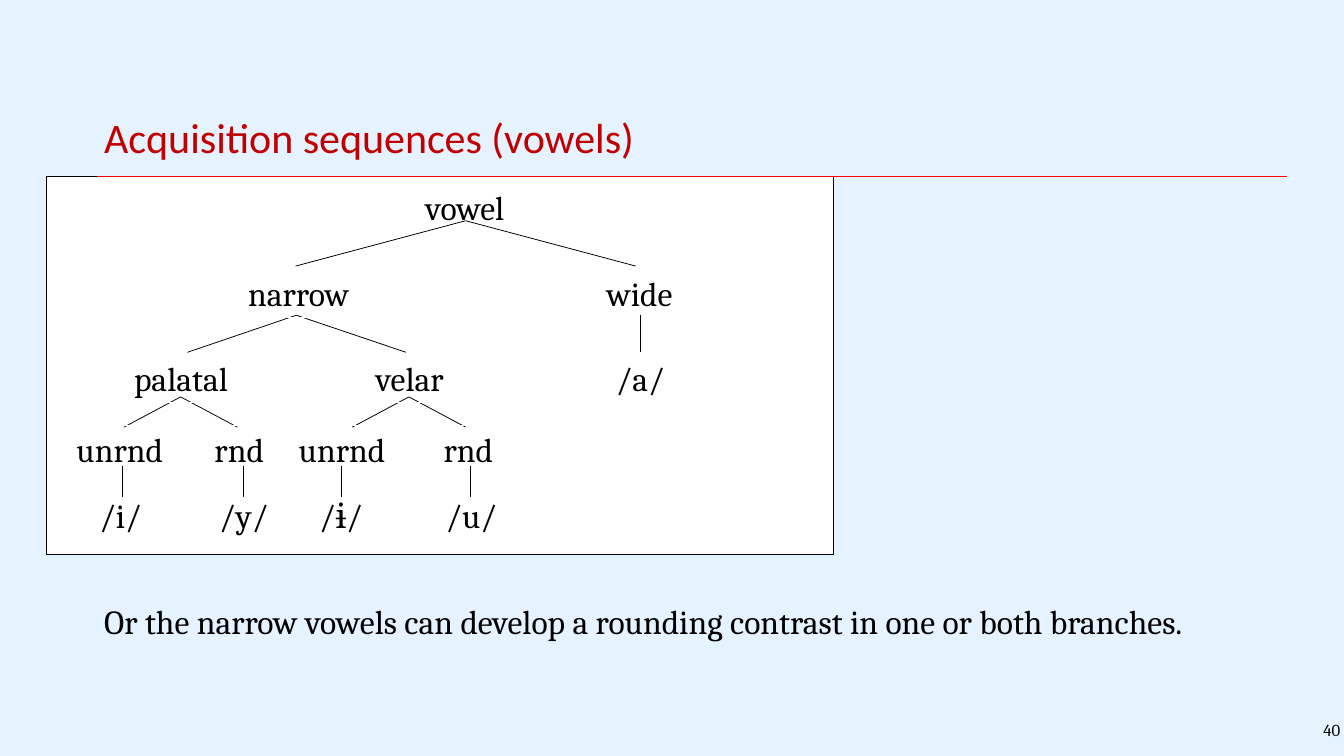
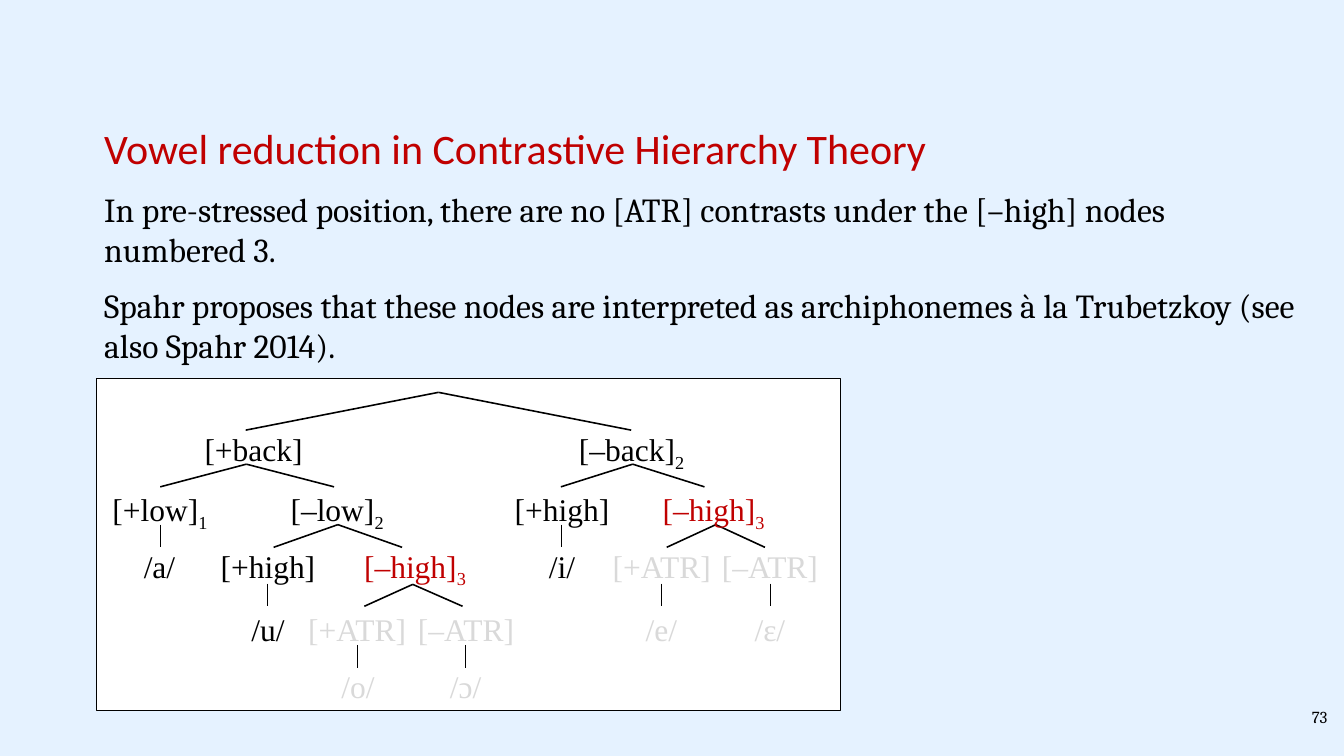
from pptx import Presentation
from pptx.dml.color import RGBColor
from pptx.enum.shapes import MSO_CONNECTOR, MSO_SHAPE
from pptx.enum.text import MSO_ANCHOR, MSO_AUTO_SIZE, PP_ALIGN
from pptx.oxml.ns import qn
from pptx.util import Inches, Pt
from lxml import etree

SKY = RGBColor(0xE5, 0xF2, 0xFF)
WHITE = RGBColor(0xFF, 0xFF, 0xFF)
BLACK = RGBColor(0, 0, 0)
CRIMSON = RGBColor(0xC0, 0, 0)
RED = RGBColor(0xFF, 0, 0)
GREY = RGBColor(0xD9, 0xD9, 0xD9)

TITLE_FONT, BODY_FONT, FEATURE_FONT = "Calibri", "Cambria", "Times New Roman"
MARGIN = 1.28


class Deck:
    """Holds the presentation, the current slide and the tree label style."""

    def __init__(self):
        self.prs = Presentation()
        self.prs.slide_width, self.prs.slide_height = Inches(17.78), Inches(10)

    def new_slide(self, label_font, label_size, label_height, branch_width):
        self.label_font, self.label_size = label_font, label_size
        self.label_height, self.branch_width = label_height, branch_width
        self.s = self.prs.slides.add_slide(self.prs.slide_layouts[6])
        fill = self.s.background.fill
        fill.solid()
        fill.fore_color.rgb = SKY

    def rect(self, left, top, width, height, line, fill=None):
        sp = self.s.shapes.add_shape(MSO_SHAPE.RECTANGLE, Inches(left), Inches(top),
                                     Inches(width), Inches(height))
        sp.shadow.inherit = False
        if fill is None:
            sp.fill.background()
        else:
            sp.fill.solid()
            sp.fill.fore_color.rgb = fill
        sp.line.color.rgb = line
        sp.line.width = Pt(0.75)
        return sp

    def set_text(self, sp, text, font, size, color=BLACK, align=PP_ALIGN.LEFT,
                 wrap=True, grow=True):
        """Fill a shape with one paragraph; what follows "_" is a subscript."""
        tf = sp.text_frame
        tf.word_wrap = wrap
        tf.vertical_anchor = MSO_ANCHOR.TOP
        tf.auto_size = MSO_AUTO_SIZE.SHAPE_TO_FIT_TEXT if grow else MSO_AUTO_SIZE.NONE
        p = tf.paragraphs[0]
        p.alignment = align
        p.font.name, p.font.size, p.font.color.rgb = font, Pt(size), color
        base, _, index = text.partition("_")
        p.add_run().text = base
        if index:
            r = p.add_run()
            r.text = index
            r.font._element.set("baseline", "-25000")

    def text(self, text, left, top, width, height, font=BODY_FONT, size=32, **style):
        sp = self.s.shapes.add_textbox(Inches(left), Inches(top),
                                       Inches(width), Inches(height))
        self.set_text(sp, text, font, size, **style)

    def title(self, text, top, width):
        self.text(text, MARGIN, top, width, 0.77, TITLE_FONT, 40, color=CRIMSON)

    def body(self, text, top, width=15.75, height=1.18):
        self.text(text, MARGIN, top, width, height)

    def page_number(self, number, left, top):
        self.text(number, left, top, 2.08, 0.5, size=16, align=PP_ALIGN.RIGHT, grow=False)

    def line(self, x1, y1, x2, y2, color=BLACK, width=0.75):
        cx = self.s.shapes.add_connector(MSO_CONNECTOR.STRAIGHT, Inches(x1), Inches(y1),
                                         Inches(x2), Inches(y2))
        cx.line.color.rgb = color
        cx.line.width = Pt(width)
        etree.SubElement(cx._element.spPr, qn("a:effectLst"))

    def fork(self, apex, top, bottom, left, right):
        for foot in (left, right):
            self.line(apex, top, foot, bottom, width=self.branch_width)

    def stems(self, top, bottom, *xs):
        for x in xs:
            self.line(x, top, x, bottom)

    def labels(self, top, *items, framed=False, colors=None):
        """Place one tree row; each item is (text, left, width)."""
        for text, left, width in items:
            color = (colors or {}).get(text, BLACK)
            style = dict(color=color, align=PP_ALIGN.CENTER, wrap=False)
            box = left, top, width, self.label_height
            if framed:
                self.set_text(self.rect(*box, WHITE), text, self.label_font,
                              self.label_size, **style)
            else:
                self.text(text, *box, self.label_font, self.label_size, **style)


def acquisition_slide(deck):
    deck.new_slide(BODY_FONT, 32, 0.64, 0.75)
    deck.rect(0.62, 2.33, 10.4, 5, BLACK, WHITE)
    deck.body("Or the narrow vowels can develop a rounding contrast in one or both branches.",
              7.9, height=0.64)
    deck.title("Acquisition sequences (vowels)", 1.42, 9.75)
    deck.line(MARGIN, 2.33, 17.02, 2.33, RED)

    deck.fork(6.16, 2.92, 3.52, 3.91, 8.41)
    deck.fork(3.92, 4.17, 4.66, 2.48, 5.37)
    for apex in (2.39, 5.41):
        deck.fork(apex, 5.25, 5.65, apex - 0.75, apex + 0.75)

    deck.labels(2.42, ("vowel", 5.48, 1.34))
    deck.labels(3.56, ("narrow", 3.14, 1.62), ("wide", 7.89, 1.14), framed=True)
    deck.labels(4.68, ("palatal", 1.64, 1.51), ("velar", 4.84, 1.16), framed=True)
    deck.labels(4.68, ("/a/", 8.04, 0.86))
    deck.labels(5.63, ("unrnd", 0.89, 1.39), ("rnd", 2.72, 0.89),
                ("unrnd", 3.83, 1.39), ("rnd", 5.75, 0.89), framed=True)
    deck.labels(6.5, ("/i/", 1.21, 0.77), ("/y/", 2.79, 0.87),
                ("/ɨ/", 4.12, 0.78), ("/u/", 5.79, 0.89))
    deck.stems(4.17, 4.66, 8.47)
    deck.stems(6.17, 6.57, 1.62, 3.22, 4.52, 6.22)
    deck.page_number("40", 15.75, 9.47)


def reduction_slide(deck):
    deck.new_slide(FEATURE_FONT, 30, 0.61, 1.5)
    deck.rect(MARGIN, 5, 9.84, 4.4, BLACK, WHITE)
    deck.title("Vowel reduction in Contrastive Hierarchy Theory", 1.57, 11.2)
    deck.body("In pre-stressed position, there are no [ATR] contrasts under the "
              "[–high] nodes numbered 3.", 2.45)
    deck.body("Spahr proposes that these nodes are interpreted as archiphonemes "
              "à la Trubetzkoy (see also Spahr 2014).", 3.72, 15.98)

    deck.fork(5.8, 5.19, 5.69, 3.25, 8.35)
    deck.fork(3.26, 6.14, 6.44, 2.12, 4.42)
    deck.fork(8.37, 6.14, 6.44, 7.42, 9.32)
    deck.fork(4.47, 6.94, 7.24, 3.62, 5.32)
    deck.fork(9.47, 6.94, 7.24, 8.82, 10.12)
    deck.fork(5.46, 7.73, 8.02, 4.82, 6.12)

    colors = dict.fromkeys(("[+ATR]", "[–ATR]", "/e/", "/ɛ/", "/o/", "/ɔ/"), GREY)
    colors["[–high]_3"] = CRIMSON
    rows = {
        5.64: [("[+back]", 2.6, 1.51), ("[–back]_2", 7.54, 1.63)],
        6.43: [("[+low]_1", 1.37, 1.49), ("[–low]_2", 3.73, 1.46),
               ("[+high]", 6.7, 1.47), ("[–high]_3", 8.65, 1.58)],
        7.18: [("/a/", 1.8, 0.62), ("[+high]", 2.81, 1.47), ("[–high]_3", 4.7, 1.58),
               ("/i/", 7.16, 0.55), ("[+ATR]", 8, 1.51), ("[–ATR]", 9.44, 1.49)],
        8.02: [("/u/", 3.22, 0.65), ("[+ATR]", 3.97, 1.51), ("[–ATR]", 5.42, 1.49),
               ("/e/", 8.44, 0.62), ("/ɛ/", 9.88, 0.61)],
        8.77: [("/o/", 4.41, 0.65), ("/ɔ/", 5.85, 0.62)],
    }
    for top, items in rows.items():
        deck.labels(top, *items, colors=colors)
    deck.stems(6.94, 7.24, 2.12, 7.43)
    deck.stems(7.72, 8.02, 3.54, 8.75, 10.19)
    deck.stems(8.53, 8.83, 4.73, 6.16)
    deck.page_number("73", 15.58, 9.3)


def main():
    deck = Deck()
    acquisition_slide(deck)
    reduction_slide(deck)
    deck.prs.save("out.pptx")


if __name__ == "__main__":
    main()
